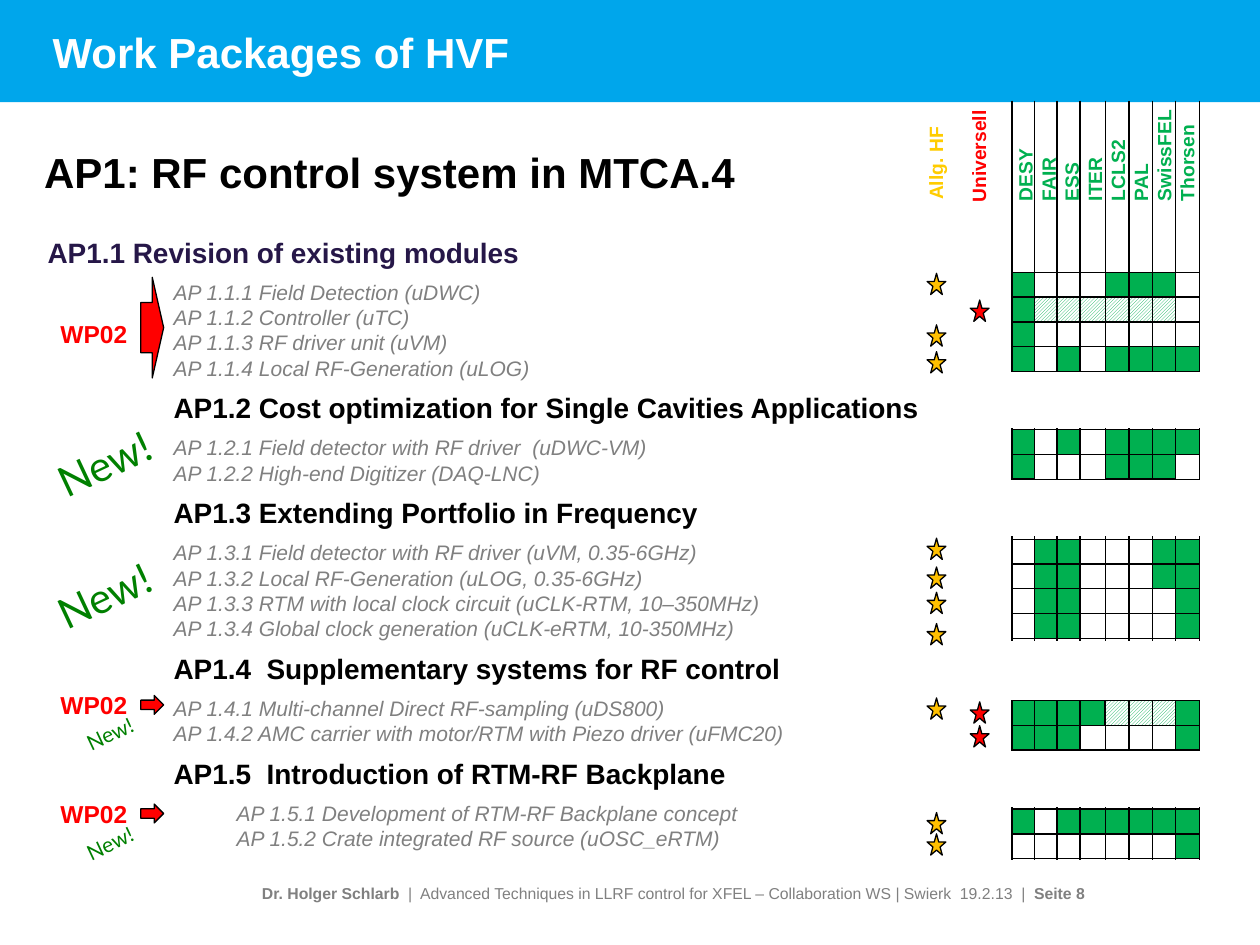
from typing import NamedTuple

from lxml import etree
from pptx import Presentation
from pptx import util as u
from pptx.dml.color import RGBColor
from pptx.enum import dml, shapes, text
from pptx.oxml.ns import qn

BLUE = RGBColor(0x00, 0xA6, 0xEB)
NAVY = RGBColor(0x26, 0x17, 0x48)
BLACK = RGBColor(0, 0, 0)
WHITE = RGBColor(255, 255, 255)
GREY = RGBColor(0x80, 0x80, 0x80)
RED = RGBColor(255, 0, 0)
GOLD = RGBColor(0xFF, 0xC0, 0)
AMBER = RGBColor(0xFF, 0xCC, 0)
GREEN = RGBColor(0, 0xB0, 0x50)
DARK = RGBColor(0, 0x80, 0)

KIND = shapes.MSO_SHAPE


class Box(NamedTuple):
    x: float
    y: float
    w: float
    h: float


class Style(NamedTuple):
    size: int
    color: RGBColor
    bold: bool = True
    italic: bool = False
    name: str = "Arial"


class Cell(NamedTuple):
    left: int
    right: int
    top: int
    end: int
    hatch: bool = False


class Band(NamedTuple):
    top: float
    rows: int
    cells: list


class Part(NamedTuple):
    head: str
    items: list


def place(box: Box) -> list:
    return [u.Cm(v) for v in box]


def draw(slide, kind, box: Box, fill: RGBColor, line=None, hatch: bool = False):
    shape = slide.shapes.add_shape(kind, *place(box))
    shape.shadow.inherit = False
    if hatch:
        shape.fill.patterned()
        shape.fill.pattern = dml.MSO_PATTERN.LIGHT_UPWARD_DIAGONAL
        shape.fill.fore_color.rgb = fill
        shape.fill.back_color.rgb = WHITE
    else:
        shape.fill.solid()
        shape.fill.fore_color.rgb = fill
    if line is None:
        shape.line.fill.background()
    else:
        shape.line.color.rgb = line
        shape.line.width = u.Pt(0.75)


def rule(slide, x1: float, y1: float, x2: float, y2: float) -> None:
    ends = [u.Cm(v) for v in (x1, y1, x2, y2)]
    line = slide.shapes.add_connector(shapes.MSO_CONNECTOR.STRAIGHT, *ends)
    line.line.color.rgb = BLACK
    line.line.width = u.Pt(0.75)
    etree.SubElement(line._element.spPr, qn("a:effectLst"))


def frame(slide, box: Box, wrap: bool = False, turn: float = 0):
    shape = slide.shapes.add_textbox(*place(box))
    shape.rotation = turn
    shape.text_frame.word_wrap = wrap
    return shape.text_frame


def write(para, words: str, style: Style) -> None:
    run = para.add_run()
    run.text = words
    look = style._asdict()
    run.font.color.rgb = look.pop("color")
    look["size"] = u.Pt(style.size)
    for key, val in look.items():
        setattr(run.font, key, val)
    para.line_spacing = u.Pt(1.2 * style.size)


def label(slide, box: Box, lines: list, style: Style, **kw):
    body = frame(slide, box, **kw)
    for i, words in enumerate(lines):
        para = body.add_paragraph() if i else body.paragraphs[0]
        write(para, words, style)
    return body


PARTS = [
    Part("AP1.1 Revision of existing modules", [
        "AP 1.1.1 Field Detection (uDWC)",
        "AP 1.1.2 Controller (uTC)",
        "AP 1.1.3 RF driver unit (uVM)",
        "AP 1.1.4 Local RF-Generation (uLOG)"]),
    Part("AP1.2 Cost optimization for Single Cavities Applications", [
        "AP 1.2.1 Field detector with RF driver  (uDWC-VM)",
        "AP 1.2.2 High-end Digitizer (DAQ-LNC)"]),
    Part("AP1.3 Extending Portfolio in Frequency", [
        "AP 1.3.1 Field detector with RF driver (uVM, 0.35-6GHz)",
        "AP 1.3.2 Local RF-Generation (uLOG, 0.35-6GHz)",
        "AP 1.3.3 RTM with local clock circuit (uCLK-RTM, 10–350MHz)",
        "AP 1.3.4 Global clock generation (uCLK-eRTM, 10-350MHz)"]),
    Part("AP1.4  Supplementary systems for RF control", [
        "AP 1.4.1 Multi-channel Direct RF-sampling (uDS800)",
        "AP 1.4.2 AMC carrier with motor/RTM with Piezo driver (uFMC20)"]),
    Part("AP1.5  Introduction of RTM-RF Backplane", [
        "\tAP 1.5.1 Development of RTM-RF Backplane concept",
        "\tAP 1.5.2 Crate integrated RF source (uOSC_eRTM)"]),
]
ORGS = ["DESY", "FAIR", "ESS", "ITER", "LCLS2", "PAL", "SwissFEL", "Thorsen"]
COLS = [20.4, 20.85, 21.31, 21.77, 22.28, 22.76, 23.24, 23.7, 24.18]
ROW = 0.5
BANDS = [
    Band(5.49, 4, [Cell(0, 1, 0, 4), Cell(4, 7, 0, 1), Cell(4, 8, 3, 4),
                   Cell(2, 3, 3, 4), Cell(1, 7, 1, 2, True)]),
    Band(8.66, 2, [Cell(4, 7, 0, 2), Cell(0, 1, 0, 2), Cell(7, 8, 0, 1),
                   Cell(2, 3, 0, 1)]),
    Band(10.87, 4, [Cell(7, 8, 0, 4), Cell(6, 7, 0, 2), Cell(1, 3, 0, 4)]),
    Band(14.12, 2, [Cell(0, 1, 0, 2), Cell(4, 7, 0, 1, True), Cell(1, 4, 0, 1),
                    Cell(7, 8, 0, 2), Cell(1, 3, 1, 2)]),
    Band(16.31, 2, [Cell(2, 8, 0, 1), Cell(0, 1, 0, 1), Cell(7, 8, 1, 2)]),
]
GAPS = [(20.29, 7.52, 1.09), (20.29, 9.7, 1.09), (20.22, 12.93, 1.17),
        (20.22, 15.16, 1.09), (20.32, 17.35, 0.15)]
STARS = [(18.69, GOLD, [5.51, 6.55, 7.09, 10.85, 11.43, 11.94, 12.57,
                        14.07, 16.38, 16.81]),
         (19.56, RED, [6.05, 14.15, 14.63])]


def outline(slide) -> None:
    body = frame(slide, Box(0.71, 4.62, 22.3, 12.78), wrap=True)
    for i, part in enumerate(PARTS):
        para = body.add_paragraph() if i else body.paragraphs[0]
        para.space_after = u.Pt(6)
        if i:
            para.space_before = u.Pt(6)
            para._p.get_or_add_pPr().set("marL", str(u.Cm(2.54)))
        write(para, part.head, Style(16, BLACK if i else NAVY))
        for item in part.items:
            para = body.add_paragraph()
            para._p.get_or_add_pPr().set("marL", str(u.Cm(2.54)))
            write(para, item, Style(12, GREY, False, True))


def matrix(slide) -> None:
    for band in BANDS:
        for c in band.cells:
            box = Box(COLS[c.left], band.top + c.top * ROW,
                      COLS[c.right] - COLS[c.left], (c.end - c.top) * ROW)
            draw(slide, KIND.RECTANGLE, box, GREEN, BLACK, c.hatch)
    label(slide, Box(21.13, 1.12, 2.36, 4.01), ORGS, Style(11, GREEN), turn=270)
    for x in COLS:
        rule(slide, x, 2.03, x, 17.48)
    for band in BANDS:
        for i in range(band.rows + 1):
            y = band.top + i * ROW
            rule(slide, COLS[0], y, COLS[-1], y)
    # White gaps between the bands
    for x, y, h in GAPS:
        draw(slide, KIND.RECTANGLE, Box(x, y, 4.01, h), WHITE, WHITE)


def main() -> None:
    deck = Presentation()
    deck.slide_width, deck.slide_height = u.Cm(25.4), u.Cm(19.05)
    slide = deck.slides.add_slide(deck.slide_layouts[6])

    # Header and footer
    draw(slide, KIND.RECTANGLE, Box(0, 0, 25.4, 2.06), BLUE)
    title = label(slide, Box(0.81, 0.28, 23.67, 1.52), ["Work Packages of HVF"],
                  Style(24, WHITE), wrap=True)
    foot = frame(slide, Box(0.79, 17.45, 21.08, 1.12), wrap=True)
    foot.margin_right = 0
    para = foot.paragraphs[0]
    para.alignment = text.PP_ALIGN.RIGHT
    for words, bold in [
            ("Dr. Holger Schlarb ", True),
            (" |  Advanced Techniques in LLRF control for XFEL – "
             "Collaboration WS | Swierk  19.2.13  |  ", False),
            ("Seite 8", True)]:
        write(para, words, Style(9, GREY, bold))
    for item in (title, foot):
        item.vertical_anchor = text.MSO_ANCHOR.MIDDLE

    # Work package list
    label(slide, Box(0.64, 2.82, 14.78, 1.27),
          ["AP1: RF control system in MTCA.4"], Style(24, BLACK), wrap=True)
    outline(slide)

    # Marks on the left
    for y, top, h in [(6.3, 5.59, 2.03), (13.79, 14.02, 0.38), (15.98, 16.21, 0.38)]:
        label(slide, Box(0.97, y, 1.88, 0.86), ["WP02"], Style(14, RED))
        draw(slide, KIND.RIGHT_ARROW, Box(2.84, top, 0.46, h), RED, BLACK)
    for box, size in [(Box(0.86, 11.35, 2.51, 1.27), 24),
                      (Box(0.86, 8.69, 2.51, 1.27), 24),
                      (Box(1.47, 14.4, 1.52, 0.76), 12),
                      (Box(1.47, 16.61, 1.52, 0.76), 12)]:
        label(slide, box, ["New!"], Style(size, DARK, False, name="Lato"), turn=334.8)

    # Stars and their headings
    label(slide, Box(17.88, 2.92, 1.98, 0.74), ["Allg. HF"], Style(11, AMBER), turn=270)
    label(slide, Box(18.54, 2.77, 2.39, 0.74), ["Universell"], Style(11, RED), turn=270)
    for x, color, tops in STARS:
        for y in tops:
            draw(slide, KIND.STAR_5_POINT, Box(x, y, 0.38, 0.43), color, BLACK)

    matrix(slide)
    deck.save("out.pptx")


if __name__ == "__main__":
    main()
